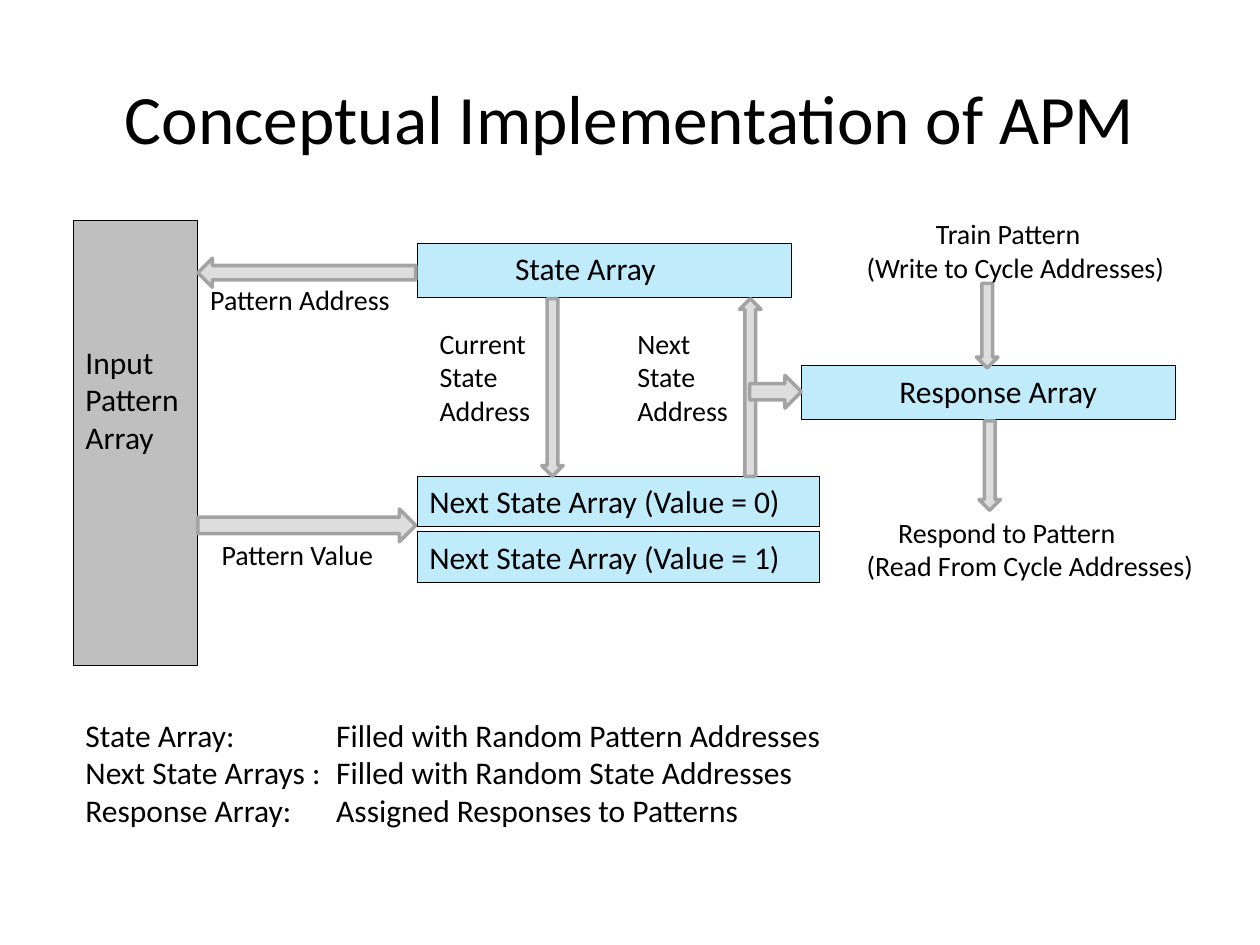
from lxml.etree import SubElement
from pptx import Presentation
from pptx.dml.color import RGBColor
from pptx.enum.shapes import MSO_SHAPE
from pptx.enum.text import MSO_ANCHOR, PP_ALIGN
from pptx.oxml.ns import qn
from pptx.util import Inches, Pt

COLORS = {"ink": "000000", "array": "00B0F0", "arrow": "DDDDDD", "edge": "A3A3A3"}


class Diagram:
    font = "Calibri"
    columns, rows = 100, 75

    def __init__(self, deck):
        self.slide = deck.slides.add_slide(deck.slide_layouts[6])
        self.column = deck.slide_width / self.columns
        self.row = deck.slide_height / self.rows

    def place(self, left, top, width, height):
        return (round(left * self.column), round(top * self.row),
                round(width * self.column), round(height * self.row))

    def color(self, name):
        return RGBColor.from_string(COLORS[name])

    def add_lines(self, shape, lines, size, indent=0, tab=0, align=PP_ALIGN.LEFT,
                  anchor=MSO_ANCHOR.TOP, drop=0):
        frame = shape.text_frame
        frame.word_wrap = True
        frame.vertical_anchor = anchor
        frame.margin_top = Inches(0.05) + round(drop * self.row)
        for number, line in enumerate(lines):
            paragraph = frame.add_paragraph() if number else frame.paragraphs[0]
            paragraph.alignment = align
            properties = paragraph._p.get_or_add_pPr()
            if indent and number == 0:
                properties.set("marL", str(round(indent * self.column)))
                properties.set("indent", "0")
            if tab:
                stops = SubElement(properties, qn("a:tabLst"))
                SubElement(stops, qn("a:tab"), pos=str(round(tab * self.column)), algn="l")
            run = paragraph.add_run()
            run.text = line
            run.font.name = self.font
            run.font.size = Pt(size)
            run.font.color.rgb = self.color("ink")

    def shape(self, preset, area, fill, line, weight):
        shape = self.slide.shapes.add_shape(preset, *self.place(*area))
        shape.shadow.inherit = False
        shape.fill.solid()
        shape.fill.fore_color.rgb = self.color(fill)
        shape.line.color.rgb = self.color(line)
        shape.line.width = Pt(weight)
        return shape

    def box(self, area, lines, fill="array", weight=0.25, **layout):
        shape = self.shape(MSO_SHAPE.RECTANGLE, area, fill, "ink", weight)
        tint = shape._element.spPr.find(qn("a:solidFill"))[0]
        SubElement(tint, qn("a:alpha"), val="25000")
        self.add_lines(shape, lines, 18, **layout)

    def arrow(self, preset, area):
        self.shape(preset, area, "arrow", "edge", 2)

    def label(self, area, lines, size=16, **layout):
        text_box = self.slide.shapes.add_textbox(*self.place(*area))
        self.add_lines(text_box, lines, size, **layout)


def main():
    deck = Presentation()
    deck.slide_width, deck.slide_height = Inches(10), Inches(7.5)
    diagram = Diagram(deck)

    diagram.label((5, 3, 90, 12.5), ["Conceptual Implementation of APM"], 39.6,
                  align=PP_ALIGN.CENTER, anchor=MSO_ANCHOR.MIDDLE)

    for left, top, name in ((33.1, 19.3, "State Array"), (63.6, 29, "Response Array")):
        diagram.box((left, top, 29.7, 4.3), [name], indent=6.8)
    for value in range(2):
        diagram.box((33.1, 37.8 + 4.4 * value, 31.9, 4),
                    [f"Next State Array (Value = {value})"])
    diagram.box((5.8, 17.5, 9.9, 35.3), ["Input Pattern", "Array"],
                fill="ink", weight=0.5, drop=9.2)

    for preset, area in (
        (MSO_SHAPE.UP_ARROW, (58.7, 23.7, 1.7, 14.1)),
        (MSO_SHAPE.DOWN_ARROW, (43, 23.7, 1.7, 14.1)),
        (MSO_SHAPE.LEFT_ARROW, (15.7, 20.5, 17.3, 2.3)),
        (MSO_SHAPE.RIGHT_ARROW, (15.7, 40.4, 17.3, 2.6)),
        (MSO_SHAPE.RIGHT_ARROW, (59.5, 29.8, 4.1, 2.6)),
        (MSO_SHAPE.DOWN_ARROW, (77.5, 22.5, 1.7, 6.7)),
        (MSO_SHAPE.DOWN_ARROW, (77.7, 33.4, 1.7, 7.1)),
    ):
        diagram.arrow(preset, area)

    for area, lines, indent in (
        ((15.7, 21.9, 16.5, 3.5), ["Pattern Address"], 0),
        ((16.6, 42.2, 14.9, 3.5), ["Pattern Value"], 0),
        ((33.9, 25.4, 9.9, 9.6), ["Current", "State Address"], 0),
        ((49.6, 25.4, 9.9, 9.6), ["Next State Address"], 0),
        ((67.8, 16.7, 26.4, 6.8), ["Train Pattern", "(Write to Cycle Addresses)"], 5.5),
        ((67.8, 40.4, 28.1, 6.8), ["Respond to Pattern", "(Read From Cycle Addresses)"], 2.5),
    ):
        diagram.label(area, lines, indent=indent)

    diagram.label((5.8, 56.3, 89.2, 10.7), [
        "State Array:\tFilled with Random Pattern Addresses",
        "Next State Arrays :\tFilled with Random State Addresses",
        "Response Array:\tAssigned Responses to Patterns",
    ], 18, tab=19.9)

    deck.save("out.pptx")


if __name__ == "__main__":
    main()
